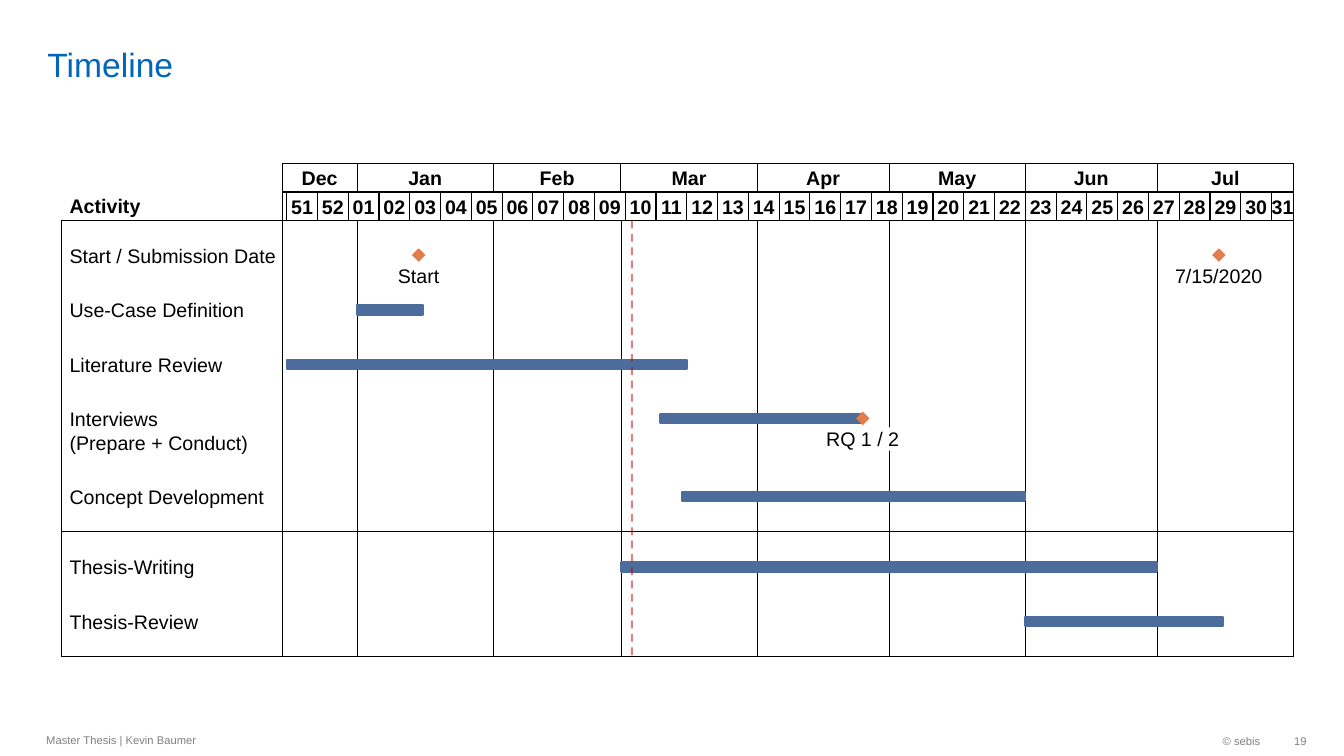
from itertools import accumulate

from lxml.etree import SubElement
from pptx import Presentation
from pptx.dml.color import RGBColor
from pptx.enum.dml import MSO_LINE as Dash
from pptx.enum.shapes import MSO_CONNECTOR as Link, MSO_SHAPE as Kind
from pptx.enum.text import MSO_ANCHOR as Anchor, MSO_AUTO_SIZE as Auto, PP_ALIGN as Align
from pptx.oxml.ns import qn
from pptx.util import Inches, Pt

BLACK = RGBColor(0x00, 0x00, 0x00)
WHITE = RGBColor(0xFF, 0xFF, 0xFF)
GREY = RGBColor(0x80, 0x80, 0x80)
TITLE = RGBColor(0x00, 0x65, 0xBD)
BLUE = RGBColor(0x4C, 0x6C, 0x9C)
ORANGE = RGBColor(0xE3, 0x7C, 0x4D)
RED = RGBColor(0xC0, 0x00, 0x00)

LEFT, START, END = 0.61, 2.8, 12.83
HEAD, WEEK, TOP, SPLIT, BASE = 1.62, 1.91, 2.19, 5.27, 6.51
CELL, BAR, GEM, LABEL = 0.28, 0.09, 0.12, 0.69
TODAY = 79.5

MONTHS = [("Dec", 17), ("Jan", 31), ("Feb", 29), ("Mar", 31),
          ("Apr", 30), ("May", 31), ("Jun", 30), ("Jul", 31)]
EDGES = list(accumulate((days for _, days in MONTHS), initial=0))
WEEKS = [51, 52, *range(1, 32)]

TASKS = [
    ("Start / Submission Date", 2.42, 2.04, None),
    ("Use-Case Definition", 2.96, 1.73, (17, 32)),
    ("Literature Review", 3.5, 1.51, (1, 92)),
    ("Interviews \v(Prepare + Conduct)", 4.04, 1.76, (86, 132)),
    ("Concept Development", 4.81, 1.92, (91, 169)),
    ("Thesis-Writing", 5.51, 1.24, (77, 199)),
    ("Thesis-Review", 6.05, 1.27, (169, 214)),
]
STONES = [("Start", 31, 2.42, 0.41), ("7/15/2020", 213, 2.42, 0.86),
          ("RQ 1 / 2", 132, 4.04, 0.72)]

PLAIN = {"name": "Arial", "size": Pt(14), "bold": False}
BOLD = {**PLAIN, "bold": True}
SMALL = {**PLAIN, "size": Pt(8)}
LARGE = {**PLAIN, "size": Pt(24)}


def day_x(day):
    return START + day * (END - START) / EDGES[-1]


def apply(item, values):
    for key, value in values.items():
        setattr(item, key, value)


def write(shape, text, font, color=BLACK, align=Align.LEFT,
          anchor=Anchor.TOP, inset=(0, 0, 0, 0), wrap=False):
    frame = shape.text_frame
    left, top, right, bottom = map(Inches, inset)
    apply(frame, {"margin_left": left, "margin_top": top,
                  "margin_right": right, "margin_bottom": bottom,
                  "word_wrap": wrap, "auto_size": Auto.NONE,
                  "vertical_anchor": anchor})
    para = frame.paragraphs[0]
    apply(para, {"text": text, "alignment": align})
    for run in para.runs:
        apply(run.font, font)
        run.font.color.rgb = color
    for gap in para._p.findall(qn("a:br")):
        SubElement(gap, qn("a:rPr"), sz=str(int(font["size"].pt * 100)))


def add_text(slide, box, text, font, **style):
    shape = slide.shapes.add_textbox(*map(Inches, box))
    write(shape, text, font, **style)
    return shape


def add_block(slide, kind, box, fill=None, line=None, width=0.75):
    shape = slide.shapes.add_shape(kind, *map(Inches, box))
    shape.shadow.inherit = False
    if fill is None:
        shape.fill.background()
    else:
        shape.fill.solid()
        shape.fill.fore_color.rgb = fill
    if line is None:
        shape.line.fill.background()
    else:
        shape.line.color.rgb = line
        shape.line.width = Pt(width)
    return shape


def add_cell(slide, first, last, top, text):
    x = day_x(first)
    cell = add_block(slide, Kind.RECTANGLE, (x, top, day_x(last) - x, CELL), line=BLACK)
    if text:
        write(cell, text, BOLD, align=Align.CENTER, anchor=Anchor.MIDDLE,
              inset=(0, 0.03, 0, 0.03))


def add_line(slide, x1, y1, x2, y2, width=0.75, color=BLACK):
    link = slide.shapes.add_connector(Link.STRAIGHT, *map(Inches, (x1, y1, x2, y2)))
    link.line.color.rgb = color
    link.line.width = Pt(width)
    SubElement(link._element.spPr, qn("a:effectLst"))
    return link


def add_header(slide):
    for (name, _), first, last in zip(MONTHS, EDGES, EDGES[1:]):
        add_cell(slide, first, last, HEAD, name)
    add_cell(slide, 0, 1, WEEK, "")
    for i, week in enumerate(WEEKS):
        first = 1 + 7 * i
        add_cell(slide, first, min(first + 7, EDGES[-1]), WEEK, f"{week:02}")
    add_text(slide, (LABEL, 1.93, 0.7, 0.23), "Activity", BOLD, anchor=Anchor.BOTTOM)


def add_grid(slide):
    for day in EDGES[1:-1]:
        add_line(slide, day_x(day), TOP, day_x(day), BASE, 0.25)
    for x in (START, END, LEFT):
        add_line(slide, x, TOP, x, BASE)
    for y, width in ((SPLIT, 0.25), (BASE, 0.75), (TOP, 0.75)):
        add_line(slide, LEFT, y, END, y, width)


def add_task(slide, name, top, width, span):
    if span:
        first, last = map(day_x, span)
        add_block(slide, Kind.RECTANGLE, (first, top + 0.07, last - first, BAR),
                  BLUE, BLUE, 1.5)
    height = 0.23 * (1 + name.count("\v"))
    add_text(slide, (LABEL, top, width, height), name, PLAIN)


def add_stone(slide, name, day, top, width):
    x = day_x(day)
    add_block(slide, Kind.DIAMOND, (x - GEM / 2, top + 0.05, GEM, GEM), ORANGE, ORANGE)
    label = add_block(slide, Kind.RECTANGLE, (x - width / 2, top + 0.2, width, 0.23), WHITE)
    write(label, name, PLAIN, align=Align.CENTER)


def add_today(slide):
    x = day_x(TODAY)
    link = add_line(slide, x, TOP, x, BASE, 1.35, RED)
    link.line.dash_style = Dash.DASH
    tint = link._element.spPr.find(".//" + qn("a:srgbClr"))
    SubElement(tint, qn("a:alpha"), val="50000")


def add_frame(slide):
    title = slide.shapes.title
    apply(title, {"left": Inches(0.37), "top": Inches(0.05),
                  "width": Inches(11.58), "height": Inches(0.79)})
    write(title, "Timeline", LARGE, color=TITLE, anchor=Anchor.BOTTOM,
          inset=(0.1, 0, 0.1, 0), wrap=True)
    pad = (0.1, 0.05, 0.1, 0.05)
    for text, box, align, inset in (
        ("Master Thesis | Kevin Baumer", (0.36, 7.18, 6.3, 0.32), Align.LEFT, pad),
        ("© sebis", (10.26, 7.19, 2.34, 0.32), Align.RIGHT, pad),
        ("19", (12.6, 7.19, 0.36, 0.32), Align.RIGHT, (0.1, 0.05, 0, 0.05)),
    ):
        add_text(slide, box, text, SMALL, color=GREY, align=align,
                 anchor=Anchor.MIDDLE, inset=inset, wrap=True)


def main():
    deck = Presentation()
    apply(deck, {"slide_width": Inches(13.33), "slide_height": Inches(7.5)})
    slide = deck.slides.add_slide(deck.slide_layouts[5])
    add_frame(slide)
    add_header(slide)
    add_grid(slide)
    for task in TASKS:
        add_task(slide, *task)
    for stone in STONES:
        add_stone(slide, *stone)
    add_today(slide)
    deck.save("out.pptx")


if __name__ == "__main__":
    main()
